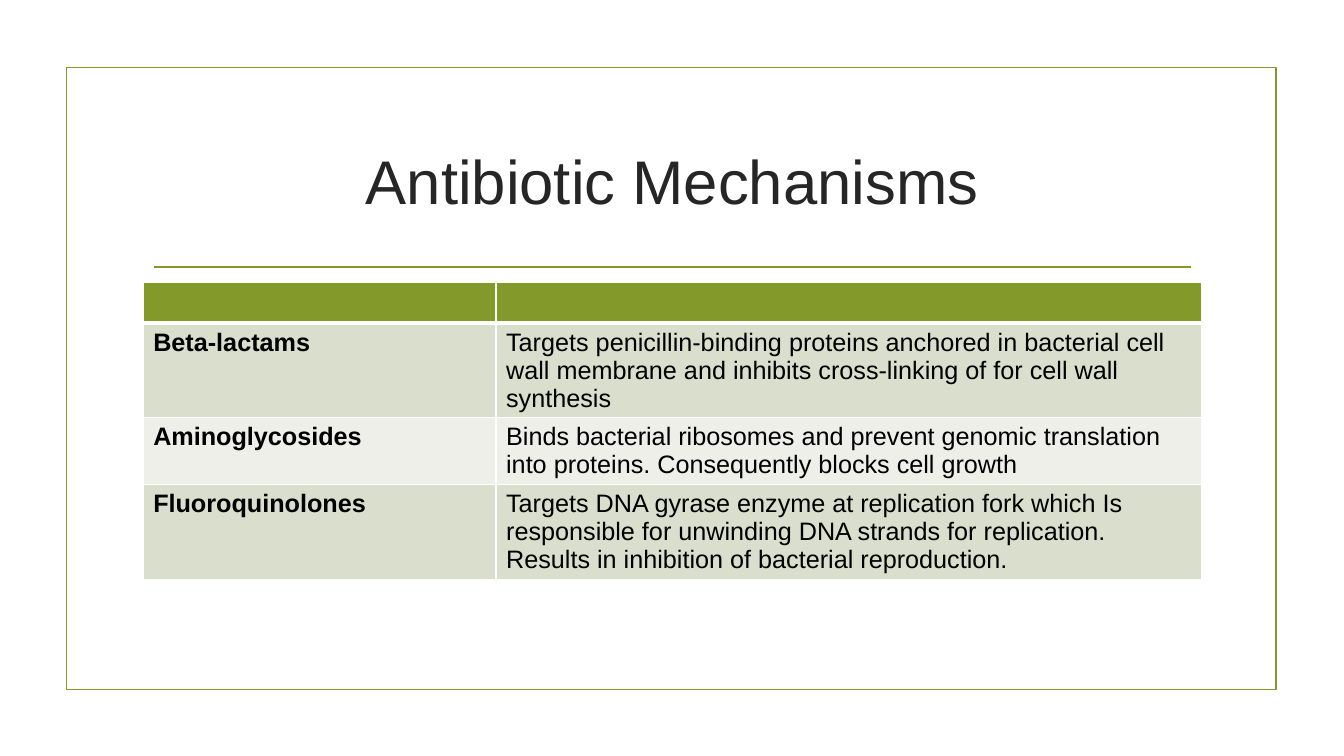
import pptx
import pptx.dml.color
import pptx.enum.shapes
import pptx.enum.text
import pptx.oxml
import pptx.oxml.ns
import pptx.util
from pptx.util import Inches

GREEN = "83992A"
WHITE = "FFFFFF"
BLACK = "000000"
TITLE_INK = "262626"
BANDS = ("D9DECD", "EDEFE8")
HAIRLINE, HEADER_RULE = 1, 3
COLUMN_WIDTHS = (3.5, 7)
ROW_HEIGHTS = (0.4, 0.94, 0.66, 0.94)

MECHANISMS = [
    ("Beta-lactams",
     "Targets penicillin-binding proteins anchored in bacterial cell wall membrane "
     "and inhibits cross-linking of for cell wall synthesis"),
    ("Aminoglycosides",
     "Binds bacterial ribosomes and prevent genomic translation into proteins. "
     "Consequently blocks cell growth"),
    ("Fluoroquinolones",
     "Targets DNA gyrase enzyme at replication fork which Is responsible for "
     "unwinding DNA strands for replication. Results in inhibition of bacterial "
     "reproduction."),
]


def color(value):
    return pptx.dml.color.RGBColor.from_string(value)


def add_run(paragraph, text, size, ink, bold=False):
    run = paragraph.add_run()
    run.text = text
    run.font.name = "Arial"
    run.font.size = pptx.util.Pt(size)
    run.font.bold = bold
    run.font.color.rgb = color(ink)


def style_line(line):
    line.color.rgb = color(GREEN)
    line.width = pptx.util.Pt(1.25)


def add_frame(slide, left, top, width, height):
    frame = slide.shapes.add_shape(
        pptx.enum.shapes.MSO_SHAPE.RECTANGLE,
        Inches(left), Inches(top), Inches(width), Inches(height))
    frame.shadow.inherit = False
    frame.fill.background()
    style_line(frame.line)


def add_heading(slide, left, top, width, height):
    heading = slide.shapes.title
    heading.left, heading.top = Inches(left), Inches(top)
    heading.width, heading.height = Inches(width), Inches(height)
    heading.text_frame.word_wrap = True
    heading.text_frame.vertical_anchor = pptx.enum.text.MSO_ANCHOR.MIDDLE
    paragraph = heading.text_frame.paragraphs[0]
    paragraph.alignment = pptx.enum.text.PP_ALIGN.CENTER
    add_run(paragraph, "Antibiotic Mechanisms", 44, TITLE_INK)

    inset, rule_top = 0.11, Inches(top + height + 0.15)
    rule = slide.shapes.add_connector(
        pptx.enum.shapes.MSO_CONNECTOR.STRAIGHT,
        Inches(left + inset), rule_top, Inches(left + width - inset), rule_top)
    style_line(rule.line)
    rule._element.spPr.append(pptx.oxml.parse_xml(
        f"<a:effectLst {pptx.oxml.ns.nsdecls('a')}/>"))


def set_borders(cell, top_width, bottom_width):
    properties = cell._tc.get_or_add_tcPr()
    widths = {"L": HAIRLINE, "R": HAIRLINE, "T": top_width, "B": bottom_width}
    for side, width in widths.items():
        properties.append(pptx.oxml.parse_xml(
            f"<a:ln{side} {pptx.oxml.ns.nsdecls('a')} w=\"{pptx.util.Pt(width)}\">"
            f"<a:solidFill><a:srgbClr val=\"{WHITE}\"/></a:solidFill></a:ln{side}>"))


def fill_cell(cell, fill):
    cell.fill.solid()
    cell.fill.fore_color.rgb = color(fill)


def add_mechanism_table(slide, left, top, width, height):
    table = slide.shapes.add_table(
        len(ROW_HEIGHTS), len(COLUMN_WIDTHS),
        Inches(left), Inches(top), Inches(width), Inches(height)).table
    for column, column_width in zip(table.columns, COLUMN_WIDTHS):
        column.width = Inches(column_width)
    for row, row_height in zip(table.rows, ROW_HEIGHTS):
        row.height = Inches(row_height)

    for header in table.rows[0].cells:
        set_borders(header, HAIRLINE, HEADER_RULE)
        fill_cell(header, GREEN)

    for index, mechanism in enumerate(MECHANISMS):
        top_width = HEADER_RULE if index == 0 else HAIRLINE
        for column, text in enumerate(mechanism):
            cell = table.cell(index + 1, column)
            set_borders(cell, top_width, HAIRLINE)
            fill_cell(cell, BANDS[index % 2])
            add_run(cell.text_frame.paragraphs[0], text, 18, BLACK, bold=column == 0)


def main():
    presentation = pptx.Presentation()
    presentation.slide_width = Inches(13.33)
    presentation.slide_height = Inches(7.5)
    slide = presentation.slides.add_slide(presentation.slide_layouts[5])
    slide.background.fill.solid()
    slide.background.fill.fore_color.rgb = color(WHITE)
    add_frame(slide, 0.66, 0.67, 12, 6.17)
    add_heading(slide, 1.42, 1.07, 10.5, 1.43)
    add_mechanism_table(slide, 1.42, 2.8, sum(COLUMN_WIDTHS), sum(ROW_HEIGHTS))
    presentation.save("out.pptx")


if __name__ == "__main__":
    main()
